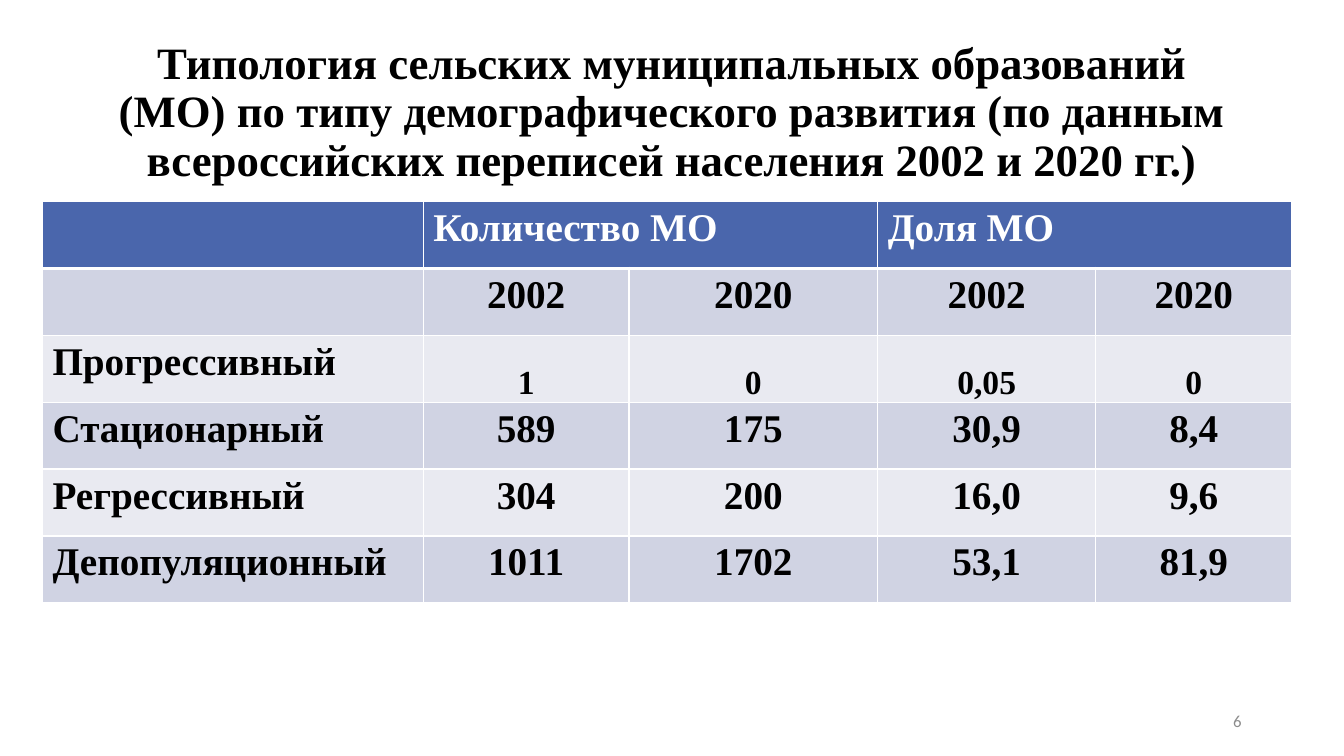
from lxml import etree
from pptx import Presentation
from pptx.dml.color import RGBColor
from pptx.enum.text import MSO_ANCHOR, PP_ALIGN
from pptx.oxml.ns import qn
from pptx.util import Cm, Pt

LEFT, CENTER, RIGHT = PP_ALIGN.LEFT, PP_ALIGN.CENTER, PP_ALIGN.RIGHT
MIDDLE, BOTTOM = MSO_ANCHOR.MIDDLE, MSO_ANCHOR.BOTTOM

BLACK = RGBColor(0x00, 0x00, 0x00)
WHITE = RGBColor(0xFF, 0xFF, 0xFF)
GREY = RGBColor(0x8C, 0x8C, 0x8C)
HEADER_BLUE = RGBColor(0x4A, 0x66, 0xAC)
BAND_DARK = RGBColor(0xD0, 0xD3, 0xE3)
BAND_LIGHT = RGBColor(0xE9, 0xEA, 0xF1)

TITLE = (
    "Типология сельских муниципальных образований (МО) по типу "
    "демографического развития (по данным всероссийских переписей "
    "населения 2002 и 2020 гг.)"
)
ROWS = [
    ["", "Количество МО", "", "Доля МО", ""],
    ["", "2002", "2020", "2002", "2020"],
    ["Прогрессивный", "1", "0", "0,05", "0"],
    ["Стационарный", "589", "175", "30,9", "8,4"],
    ["Регрессивный", "304", "200", "16,0", "9,6"],
    ["Депопуляционный", "1011", "1702", "53,1", "81,9"],
]
COLUMN_WIDTHS = [9.6, 5.18, 6.27, 5.49, 4.95]
TABLE_HEIGHT = 10.11
HEADER_ROW, PROGRESSIVE_ROW = 0, 2

TITLE_FONT = {"name": "Times New Roman", "size": Pt(32), "bold": True}
TABLE_FONT = {"name": "Times New Roman", "size": Pt(28), "bold": True}
NUMBER_FONT = {"name": "Calibri", "size": Pt(12), "bold": False}
PROGRESSIVE_CELL = {
    "vertical_anchor": BOTTOM,
    "margin_left": Cm(0.18),
    "margin_right": Cm(0.18),
    "margin_top": 0,
    "margin_bottom": 0,
}
PROGRESSIVE_PARAGRAPH = {"line_spacing": 1.07, "space_after": Pt(8)}


def apply_format(target, values):
    for attribute, value in values.items():
        setattr(target, attribute, value)


def write_text(frame, text, font, color, alignment):
    paragraph = frame.paragraphs[0]
    paragraph.alignment = alignment
    run = paragraph.add_run()
    run.text = text
    apply_format(run.font, font)
    run.font.color.rgb = color
    return paragraph


def add_text(slide, box, text, font, color, alignment):
    frame = slide.shapes.add_textbox(*map(Cm, box)).text_frame
    apply_format(frame, {"word_wrap": True, "vertical_anchor": MIDDLE})
    return write_text(frame, text, font, color, alignment)


def set_borders(cell, top, bottom):
    """Draw white cell borders; top and bottom widths are in points."""
    properties = cell._tc.get_or_add_tcPr()
    widths = {"a:lnL": 1, "a:lnR": 1, "a:lnT": top, "a:lnB": bottom}
    for position, (tag, width) in enumerate(widths.items()):
        line = etree.Element(qn(tag), w=str(Pt(width)))
        fill = etree.SubElement(line, qn("a:solidFill"))
        etree.SubElement(fill, qn("a:srgbClr"), val=str(WHITE))
        properties.insert(position, line)


def fill_cell(cell, row, column, text):
    is_header = row == HEADER_ROW
    cell.fill.solid()
    band = BAND_DARK if row % 2 else BAND_LIGHT
    cell.fill.fore_color.rgb = HEADER_BLUE if is_header else band
    set_borders(cell, top=3 if row == HEADER_ROW + 1 else 1, bottom=3 if is_header else 1)
    if not text:
        return
    color = WHITE if is_header else BLACK
    alignment = LEFT if is_header or column == 0 else CENTER
    paragraph = write_text(cell.text_frame, text, TABLE_FONT, color, alignment)
    if row == PROGRESSIVE_ROW and column > 0:
        apply_format(cell, PROGRESSIVE_CELL)
        apply_format(paragraph, PROGRESSIVE_PARAGRAPH)
        paragraph.runs[0].font.size = Pt(24)


def add_typology_table(slide):
    table = slide.shapes.add_table(
        len(ROWS), len(COLUMN_WIDTHS), Cm(1.07), Cm(5.08),
        Cm(sum(COLUMN_WIDTHS)), Cm(TABLE_HEIGHT),
    ).table
    for column, width in zip(table.columns, COLUMN_WIDTHS):
        column.width = Cm(width)
    for first in (1, 3):
        table.cell(HEADER_ROW, first).merge(table.cell(HEADER_ROW, first + 1))
    for row, texts in enumerate(ROWS):
        for column, text in enumerate(texts):
            fill_cell(table.cell(row, column), row, column, text)


def main():
    presentation = Presentation()
    presentation.slide_width = Cm(33.87)
    presentation.slide_height = Cm(19.05)
    slide = presentation.slides.add_slide(presentation.slide_layouts[6])
    title = add_text(slide, (2.33, 1.01, 29.21, 3.68), TITLE, TITLE_FONT, BLACK, CENTER)
    title.line_spacing = 0.9
    add_typology_table(slide)
    add_text(slide, (23.92, 17.66, 7.62, 1.01), "6", NUMBER_FONT, GREY, RIGHT)
    presentation.save("out.pptx")


if __name__ == "__main__":
    main()
